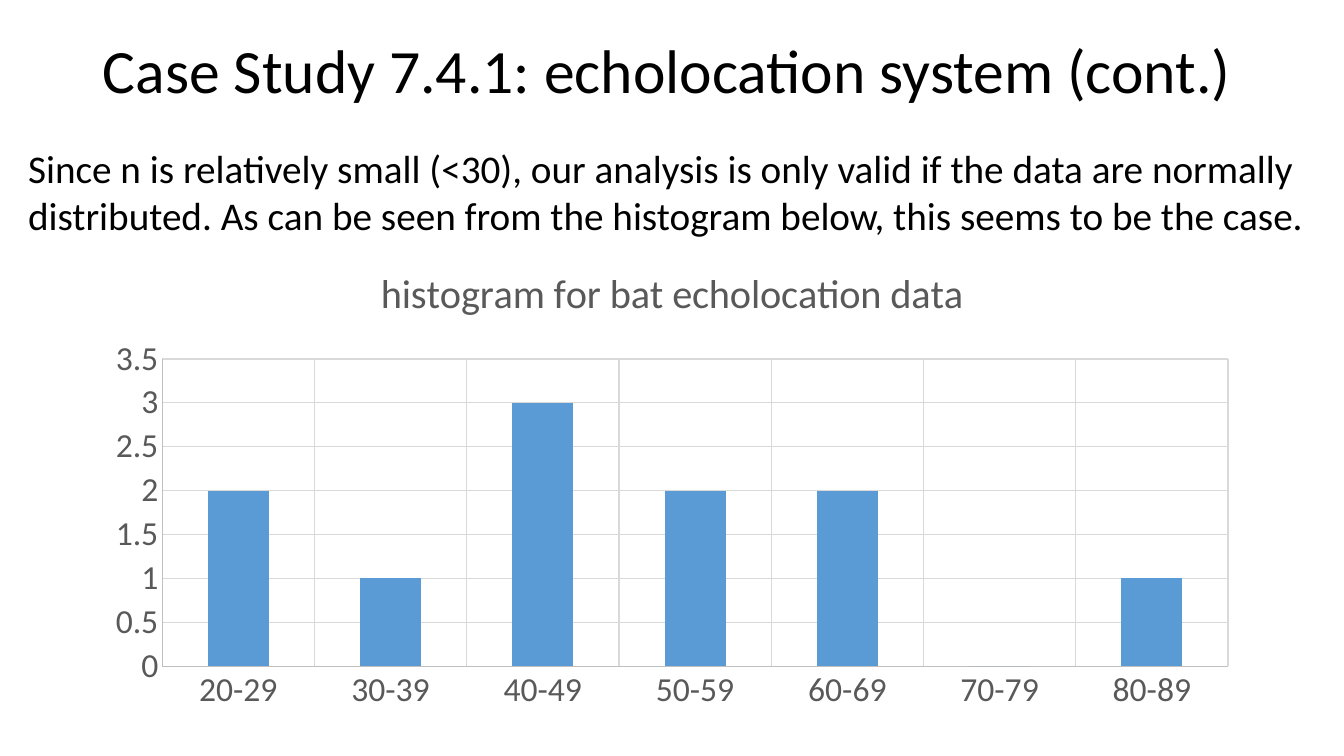
from lxml.etree import SubElement
from pptx import Presentation
from pptx.chart.data import CategoryChartData
from pptx.dml.color import RGBColor
from pptx.enum.chart import XL_CHART_TYPE, XL_TICK_MARK
from pptx.enum.text import MSO_ANCHOR, MSO_AUTO_SIZE, PP_ALIGN
from pptx.oxml.ns import qn
from pptx.util import Inches, Pt

FONT = "Calibri"
BLACK, GRAY, AXIS, GRID, BLUE = "000000", "595959", "BFBFBF", "D9D9D9", "5B9BD5"


def color(value):
    return RGBColor.from_string(value)


def style_font(font, size, fill):
    font.name = FONT
    font.size = Pt(size)
    font.bold = False
    font.color.rgb = color(fill)


def write_text(frame, lines, size=28, fill=BLACK, spacing=None):
    for index, line in enumerate(lines):
        paragraph = frame.add_paragraph() if index else frame.paragraphs[0]
        paragraph.alignment = PP_ALIGN.LEFT
        paragraph.line_spacing = spacing
        run = paragraph.add_run()
        run.text = line
        style_font(run.font, size, fill)


def style_line(line, fill):
    line.color.rgb = color(fill)
    line.width = Pt(0.75)


class SlideBuilder:
    def __init__(self, presentation):
        self.width = presentation.slide_width
        self.height = presentation.slide_height
        self.slide = presentation.slides.add_slide(presentation.slide_layouts[5])

    def place(self, left, top, width, height):
        return (round(left * self.width), round(top * self.height),
                round(width * self.width), round(height * self.height))

    def title(self, text, box):
        shape = self.slide.shapes.title
        shape.left, shape.top, shape.width, shape.height = self.place(*box)
        frame = shape.text_frame
        frame.vertical_anchor = MSO_ANCHOR.MIDDLE
        write_text(frame, [text], size=44, spacing=0.9)

    def text(self, lines, box):
        frame = self.slide.shapes.add_textbox(*self.place(*box)).text_frame
        frame.word_wrap = False
        frame.auto_size = MSO_AUTO_SIZE.SHAPE_TO_FIT_TEXT
        write_text(frame, lines)

    def histogram(self, title, counts, box, plot_area):
        data = CategoryChartData()
        data.categories = list(counts)
        data.add_series("Series 1", list(counts.values()))
        chart = self.slide.shapes.add_chart(
            XL_CHART_TYPE.COLUMN_CLUSTERED, *self.place(*box), data).chart
        style_font(chart.font, 24, GRAY)
        chart.has_legend = False
        chart.has_title = True
        write_text(chart.chart_title.text_frame, [title], size=28.8, fill=GRAY)
        chart.chart_title.include_in_layout = False

        plot = chart.plots[0]
        plot.gap_width = 150
        plot.vary_by_categories = False
        bars = plot.series[0].format.fill
        bars.solid()
        bars.fore_color.rgb = color(BLUE)

        for axis in (chart.category_axis, chart.value_axis):
            axis.major_tick_mark = axis.minor_tick_mark = XL_TICK_MARK.NONE
            axis.has_major_gridlines = True
            style_line(axis.major_gridlines.format.line, GRID)
            style_line(axis.format.line, AXIS)
            style_font(axis.tick_labels.font, 24, GRAY)
        chart.value_axis.minimum_scale = 0
        chart.value_axis.maximum_scale = 3.5
        chart.value_axis.major_unit = 0.5
        self.set_plot_area(chart, plot_area)

    def set_plot_area(self, chart, plot_area):
        area = chart.element.find(".//" + qn("c:plotArea"))
        for layout in area.findall(qn("c:layout")):
            area.remove(layout)
        layout = SubElement(area, qn("c:layout"))
        area.insert(0, layout)
        manual = SubElement(layout, qn("c:manualLayout"))
        settings = {"layoutTarget": "inner", "xMode": "edge", "yMode": "edge"}
        settings.update(zip("xywh", plot_area))
        for name, value in settings.items():
            SubElement(manual, qn("c:" + name)).set("val", str(value))


def main():
    presentation = Presentation()
    presentation.slide_width = Inches(13.33)
    presentation.slide_height = Inches(7.5)
    builder = SlideBuilder(presentation)
    margin = 0.92 / 13.33
    content_width = 1 - 2 * margin
    builder.title("Case Study 7.4.1: echolocation system (cont.)",
                  (margin, 0, content_width, 1.45 / 7.5))
    counts = {"20-29": 2, "30-39": 1, "40-49": 3, "50-59": 2,
              "60-69": 2, "70-79": 0, "80-89": 1}
    builder.histogram("histogram for bat echolocation data", counts,
                      (margin, 2.42 / 7.5, content_width, 4.76 / 7.5),
                      (0.06, 0.24, 0.92, 0.64))
    builder.text([
        "Since n is relatively small (<30), our analysis is only valid if the data are normally",
        "distributed. As can be seen from the histogram below, this seems to be the case.",
    ], (0.18 / 13.33, 1.38 / 7.5, 12.97 / 13.33, 1.04 / 7.5))
    presentation.save("out.pptx")


if __name__ == "__main__":
    main()
